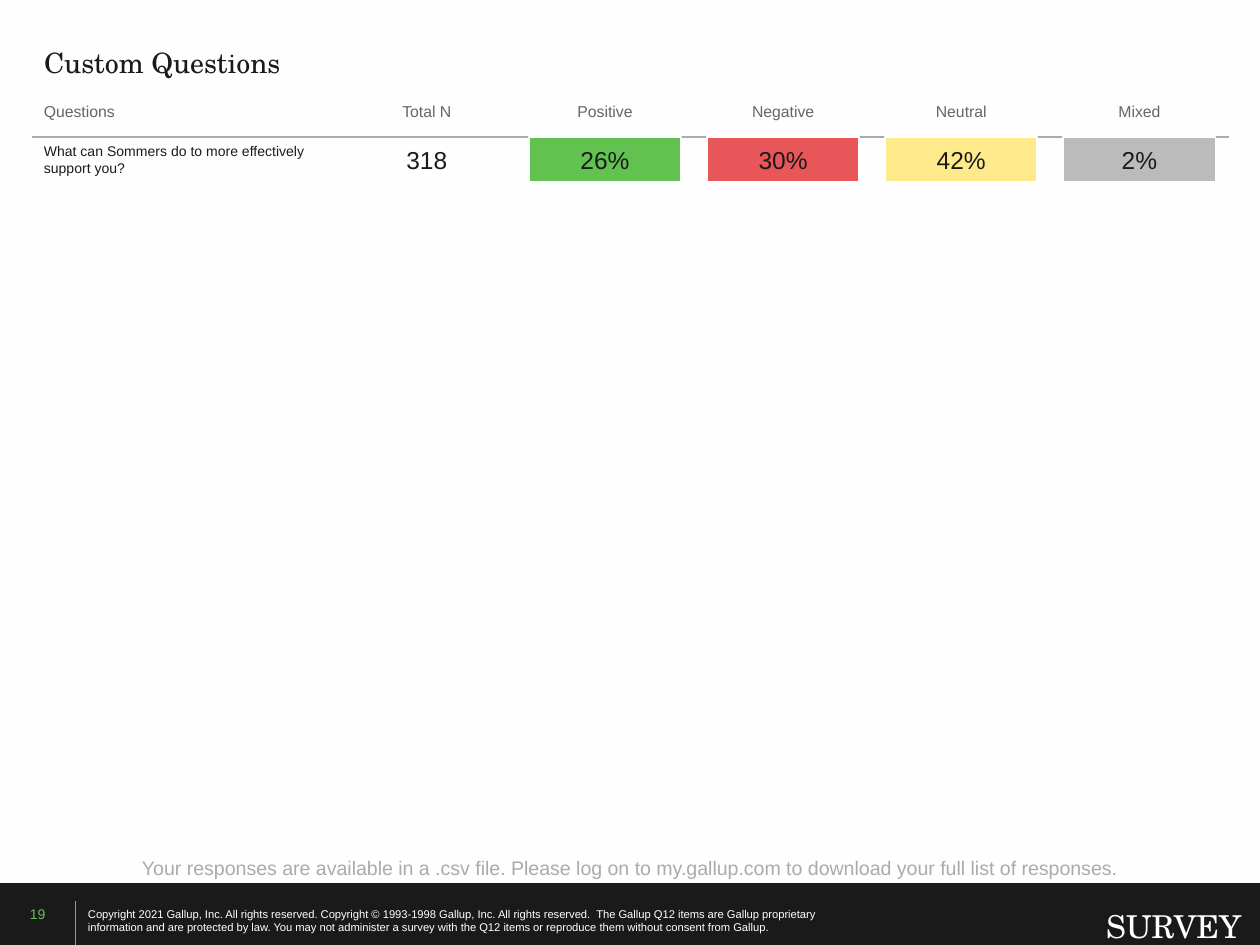
from dataclasses import dataclass

from pptx import Presentation
from pptx.dml.color import RGBColor as RGB
from pptx.enum.shapes import MSO_CONNECTOR as Link, MSO_SHAPE as Shape
from pptx.enum.text import MSO_ANCHOR as Anchor, MSO_AUTO_SIZE as Auto, PP_ALIGN as Align
from pptx.oxml.ns import qn
from pptx.util import Pt
from lxml.etree import SubElement


@dataclass(frozen=True)
class Theme:
    """Colours, fonts and type sizes of the slide."""
    paper: str = "FFFEFF"
    ink: str = "1A1A1A"
    white: str = "FFFFFF"
    head: str = "666666"
    rule: str = "A9ABAC"
    green: str = "61C250"
    red: str = "E8565A"
    yellow: str = "FEEA8A"
    grey: str = "BBBBBB"
    sans: str = "Arial"
    serif: str = "TeX Gyre Schola"
    mark: float = 18
    title: float = 16
    value: float = 14
    note: float = 11.2
    label: float = 9
    small: float = 8
    legal: float = 6.4


T = Theme()
WIDE, HIGH = 720, 540
LEFT, RIGHT, SPLIT = 18, 702, 193
STEP = (RIGHT - LEFT - (SPLIT - LEFT)) / 5
HEAD, ROW, TALL = 48.2, 78.5, 25.2
FOOT, LEGAL, BAR = 504.7, 514.8, 43.2
INSET = 7.4

COLS = [
    ("Total N", "318", None),
    ("Positive", "26%", T.green),
    ("Negative", "30%", T.red),
    ("Neutral", "42%", T.yellow),
    ("Mixed", "2%", T.grey),
]
QUERY = "What can Sommers do to more effectively support you?"
NOTE = ("Your responses are available in a .csv file. Please log on to "
        "my.gallup.com to download your full list of responses.")
RIGHTS = ("Copyright 2021 Gallup, Inc. All rights reserved. Copyright © 1993-1998 "
          "Gallup, Inc. All rights reserved.  The Gallup Q12 items are Gallup "
          "proprietary information and are protected by law. You may not administer "
          "a survey with the Q12 items or reproduce them without consent from Gallup.")


def write(shape, text, size, color, face=T.sans, align=Align.LEFT, anchor=Anchor.MIDDLE):
    """Put one formatted paragraph into a shape."""
    frame = shape.text_frame
    frame.text = text
    frame.word_wrap = True
    frame.auto_size = Auto.NONE
    frame.vertical_anchor = anchor
    para = frame.paragraphs[0]
    para.alignment = align
    font = para.font
    font.name, font.size = face, Pt(size)
    font.color.rgb = RGB.from_string(color)


def add_text(slide, box, *args, **kw):
    """Add a text box."""
    write(slide.shapes.add_textbox(*map(Pt, box)), *args, **kw)


def add_rect(slide, box, fill, edge=None):
    """Add a flat rectangle, with a thin edge if a colour is given."""
    rect = slide.shapes.add_shape(Shape.RECTANGLE, *map(Pt, box))
    rect.shadow.inherit = False
    rect.fill.solid()
    rect.fill.fore_color.rgb = RGB.from_string(fill)
    if edge:
        rect.line.color.rgb = RGB.from_string(edge)
        rect.line.width = Pt(1)
    else:
        rect.line.fill.background()
    return rect


def add_line(slide, ends, color):
    """Add a straight line without shadow."""
    line = slide.shapes.add_connector(Link.STRAIGHT, *map(Pt, ends))
    line.line.color.rgb = RGB.from_string(color)
    line.line.width = Pt(1)
    SubElement(line.element.spPr, qn("a:effectLst"))


def set_title(slide, text):
    """Place and format the title."""
    title = slide.shapes.title
    title.left, title.top, title.width, title.height = map(Pt, (LEFT, 22.3, 690, 26.6))
    write(title, text, T.title, T.ink, T.serif, anchor=Anchor.TOP)


def add_foot(slide):
    """Draw the footer band with page number, rights and name."""
    add_rect(slide, (0, FOOT, WIDE, HIGH - FOOT), T.ink)
    add_text(slide, (0, FOOT, BAR, HIGH - FOOT), "19", T.small, T.green, align=Align.CENTER)
    add_line(slide, (BAR, LEGAL, BAR, HIGH), T.green)
    add_text(slide, (BAR, LEGAL, 432, TALL), RIGHTS, T.legal, T.white, anchor=Anchor.TOP)
    add_text(slide, (625, LEGAL, 95, TALL), "SURVEY", T.mark, T.white, T.serif,
             anchor=Anchor.TOP)


def add_grid(slide):
    """Draw the question row under its column heads."""
    wide = SPLIT - LEFT
    add_text(slide, (LEFT, HEAD, wide, ROW - HEAD), "Questions", T.label, T.head)
    add_line(slide, (LEFT, ROW, RIGHT, ROW), T.rule)
    add_text(slide, (LEFT, ROW, wide, TALL), QUERY, T.small, T.ink)
    for i, (name, value, fill) in enumerate(COLS):
        x = SPLIT + i * STEP
        add_text(slide, (x, HEAD, STEP, ROW - HEAD), name, T.label, T.head,
                 align=Align.CENTER)
        if fill:
            tile = add_rect(slide, (x + INSET, ROW, STEP - 2 * INSET, TALL), fill, T.white)
            write(tile, value, T.value, T.ink, align=Align.CENTER)
        else:
            add_text(slide, (x, ROW, STEP, TALL), value, T.value, T.ink, align=Align.CENTER)


def main():
    """Build and save the slide."""
    deck = Presentation()
    deck.slide_width, deck.slide_height = Pt(WIDE), Pt(HIGH)
    slide = deck.slides.add_slide(deck.slide_layouts[5])
    back = slide.background.fill
    back.solid()
    back.fore_color.rgb = RGB.from_string(T.paper)
    set_title(slide, "Custom Questions")
    add_foot(slide)
    add_text(slide, (0, 486.7, WIDE, 18), NOTE, T.note, T.rule, align=Align.CENTER)
    add_grid(slide)
    deck.save("out.pptx")


if __name__ == "__main__":
    main()
